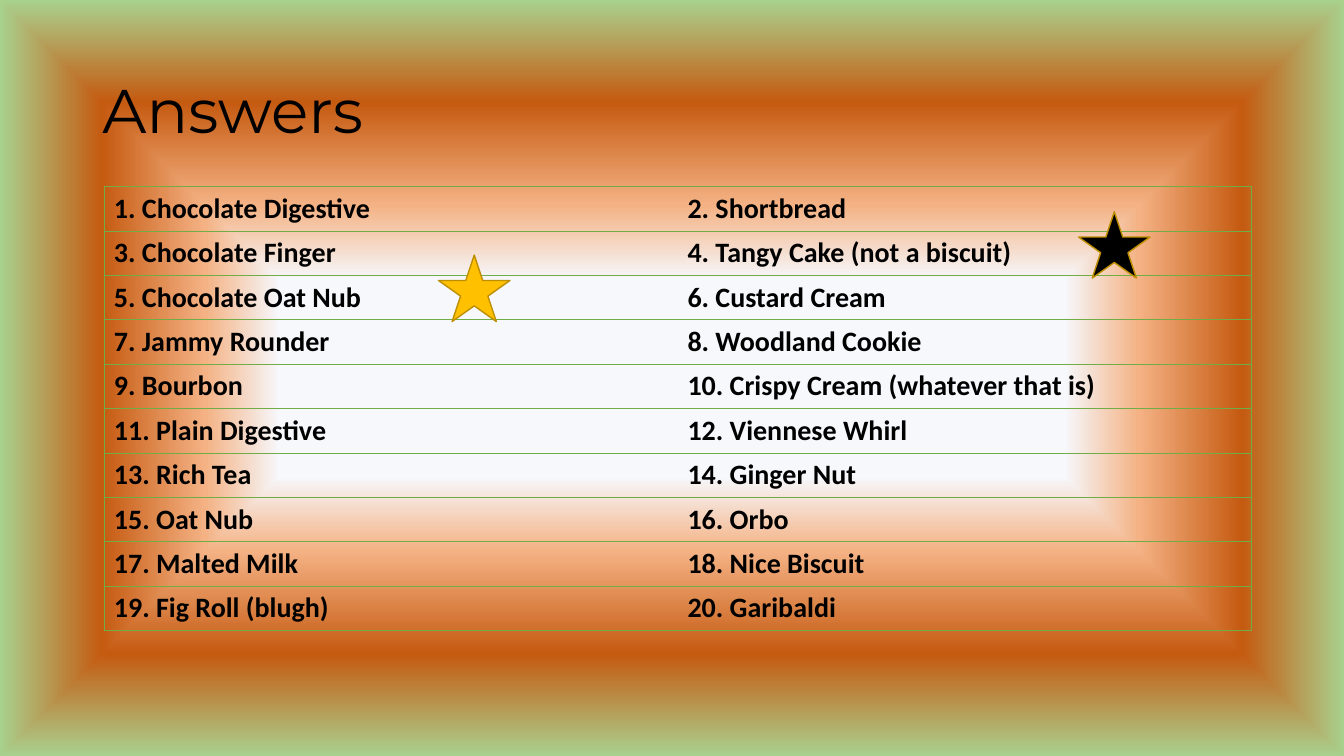
from pptx import Presentation
from pptx.dml.color import RGBColor
from pptx.enum import shapes, text
from pptx.oxml import parse_xml
from pptx.oxml.ns import nsdecls
from pptx.util import Pt

TITLE = "Answers"
ANSWERS = [
    "Chocolate Digestive", "Shortbread",
    "Chocolate Finger", "Tangy Cake (not a biscuit)",
    "Chocolate Oat Nub", "Custard Cream",
    "Jammy Rounder", "Woodland Cookie",
    "Bourbon", "Crispy Cream (whatever that is)",
    "Plain Digestive", "Viennese Whirl",
    "Rich Tea", "Ginger Nut",
    "Oat Nub", "Orbo",
    "Malted Milk", "Nice Biscuit",
    "Fig Roll (blugh)", "Garibaldi",
]
COLS = 2
ROWS = len(ANSWERS) // COLS

BLACK = RGBColor(0x00, 0x00, 0x00)
GOLD = RGBColor(0xFF, 0xC0, 0x00)
DARK_GOLD = RGBColor(0xBD, 0x8E, 0x00)
GREEN = RGBColor(0x70, 0xAD, 0x47)
BACKGROUND = [  # percent from the centre, colour
    (26, RGBColor(0xF6, 0xF8, 0xFC)),
    (46, RGBColor(0xF4, 0xB1, 0x83)),
    (73, RGBColor(0xC5, 0x5A, 0x11)),
    (100, RGBColor(0xA9, 0xD1, 0x8E)),
]
STARS = [(313.2, 182.2, GOLD), (770.4, 151.2, BLACK)]  # left, top, fill


def set_background(slide):
    """Fill the slide with a rectangular gradient around its centre."""
    stops = "".join(
        f'<a:gs pos="{pos * 1000}"><a:srgbClr val="{color}"/></a:gs>'
        for pos, color in BACKGROUND)
    bg = parse_xml(
        f'<p:bg {nsdecls("p", "a")}><p:bgPr><a:gradFill rotWithShape="1">'
        f'<a:gsLst>{stops}</a:gsLst><a:path path="shape">'
        '<a:fillToRect l="50000" t="50000" r="50000" b="50000"/></a:path>'
        '</a:gradFill><a:effectLst/></p:bgPr></p:bg>')
    slide._element.cSld.insert(0, bg)


def set_borders(cell, hidden):
    """Draw thin green borders, except on the hidden side."""
    props = cell._tc.get_or_add_tcPr()
    green = f'<a:solidFill><a:srgbClr val="{GREEN}"/></a:solidFill>'
    for i, side in enumerate("LRTB"):
        fill = "<a:noFill/>" if side == hidden else green
        props.insert(i, parse_xml(
            f'<a:ln{side} {nsdecls("a")} w="{Pt(0.5)}">{fill}</a:ln{side}>'))


def add_title(slide):
    sp = slide.shapes.title
    sp.left, sp.top, sp.width, sp.height = Pt(66), Pt(28.8), Pt(828), Pt(104.4)
    tf = sp.text_frame
    tf.text = TITLE
    tf.vertical_anchor = text.MSO_ANCHOR.MIDDLE
    p = tf.paragraphs[0]
    p.alignment = text.PP_ALIGN.LEFT
    p.line_spacing = 0.9
    p.font.name, p.font.size = "Montserrat", Pt(44)
    p.font.color.rgb = BLACK


def add_answers(slide):
    table = slide.shapes.add_table(
        ROWS, COLS, Pt(74.2), Pt(133.2), Pt(819.4), Pt(295)).table
    table.first_row = table.horz_banding = False
    for i, answer in enumerate(ANSWERS):
        row, col = divmod(i, COLS)
        cell = table.cell(row, col)
        cell.text = f"{i + 1}. {answer}"
        cell.fill.background()
        set_borders(cell, hidden="R" if col == 0 else "L")
        font = cell.text_frame.paragraphs[0].font
        font.name, font.size, font.bold = "Calibri", Pt(20), True
        font.color.rgb = BLACK


def add_stars(slide):
    for left, top, color in STARS:
        sp = slide.shapes.add_shape(
            shapes.MSO_SHAPE.STAR_5_POINT, Pt(left), Pt(top), Pt(51.1), Pt(47.5))
        sp.shadow.inherit = False
        sp.fill.solid()
        sp.fill.fore_color.rgb = color
        sp.line.color.rgb = DARK_GOLD
        sp.line.width = Pt(1)


def main():
    prs = Presentation()
    prs.slide_width, prs.slide_height = Pt(960), Pt(540)
    slide = prs.slides.add_slide(prs.slide_layouts[5])
    set_background(slide)
    add_title(slide)
    add_answers(slide)
    add_stars(slide)
    prs.save("out.pptx")


if __name__ == "__main__":
    main()
